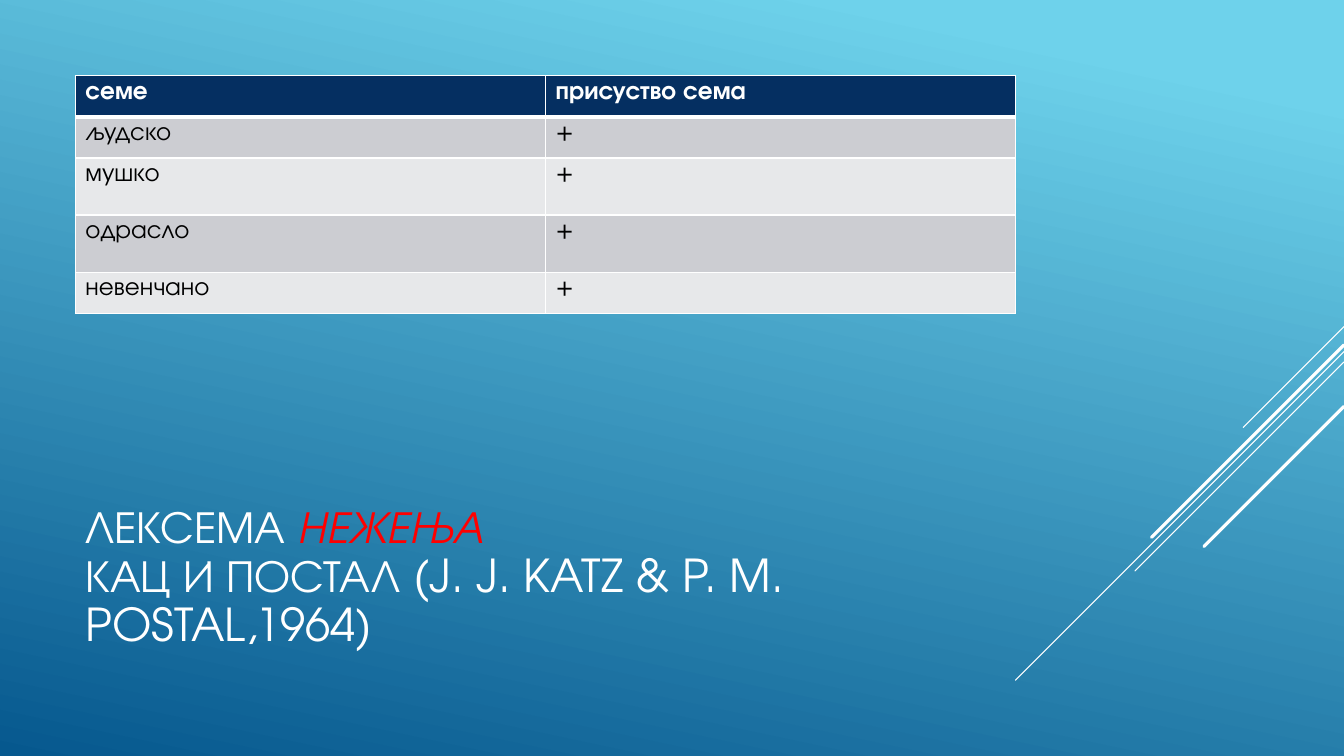
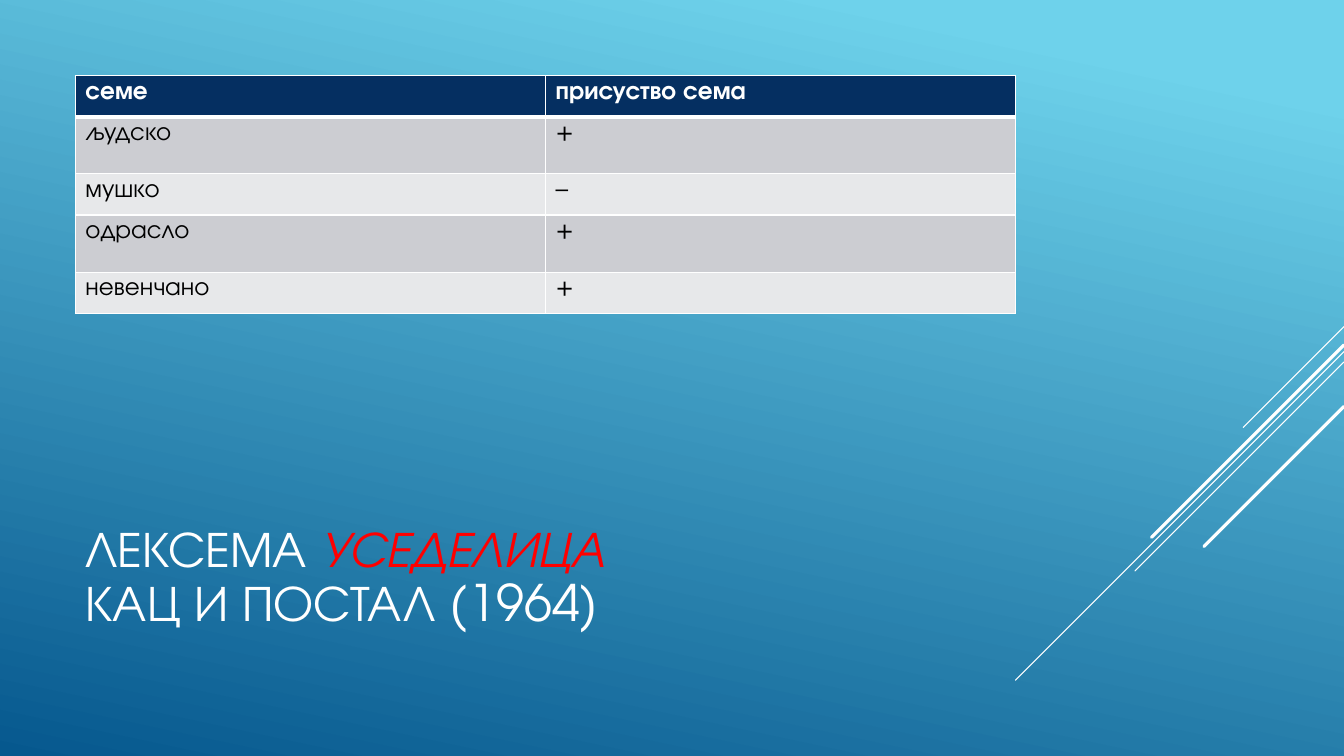
from lxml.etree import SubElement
from pptx import Presentation
from pptx.dml.color import RGBColor
from pptx.enum.shapes import MSO_CONNECTOR as Connector
from pptx.enum.text import MSO_ANCHOR as Anchor
from pptx.oxml.ns import qn
from pptx.util import Cm, Pt

WHITE = RGBColor(0xFF, 0xFF, 0xFF)
BLACK = RGBColor(0, 0, 0)
RED = RGBColor(0xFF, 0, 0)
NAVY = RGBColor(0x05, 0x2F, 0x61)
GREY = RGBColor(0xCC, 0xCD, 0xD2)
PALE_GREY = RGBColor(0xE7, 0xE8, 0xEA)
SKY = RGBColor(0x6E, 0xD2, 0xEB)
DEEP_BLUE = RGBColor(0x06, 0x58, 0x8E)

FONT = "TeX Gyre Adventor"
WIDTH, HEIGHT = 33.87, 19.05
LEFT, CONTENT_WIDTH = 1.9, 23.7
TABLE_TOP, ROW_HEIGHT, TALL_ROW_HEIGHT = 1.9, 1.04, 1.44
TITLE_TOP, TITLE_HEIGHT = 12.47, 4.19

# Diagonal rays from the right edge: start height, run in cm, weight in pt
RAYS = [(8.23, 2.54, 0.75), (8.86, 8.28, 0.75), (9.12, 5.27, 0.75),
        (8.69, 4.85, 2.25), (10.24, 3.53, 2.25)]

HEADER = ("семе", "присуство сема")
SEMES = ("људско", "мушко", "одрасло", "невенчано")


def add_text(paragraph, text, size=18, color=BLACK, bold=False, italic=False):
    run = paragraph.add_run()
    run.text = text
    font = run.font
    font.name, font.size = FONT, Pt(size)
    font.bold, font.italic = bold, italic
    font.color.rgb = color


def set_borders(cell, bottom=1):
    """Draw white borders round a cell; widths are in points."""
    properties = cell._tc.get_or_add_tcPr()
    weights = {"a:lnL": 1, "a:lnR": 1, "a:lnT": 1, "a:lnB": bottom}
    for position, (tag, weight) in enumerate(weights.items()):
        border = SubElement(properties, qn(tag), w=str(Pt(weight)))
        fill = SubElement(border, qn("a:solidFill"))
        SubElement(fill, qn("a:srgbClr"), val=str(WHITE))
        properties.insert(position, border)


class Deck:
    def __init__(self):
        self.presentation = Presentation()
        self.presentation.slide_width = Cm(WIDTH)
        self.presentation.slide_height = Cm(HEIGHT)
        self.slide = None
        self.paint_background()

    def paint_background(self):
        fill = self.presentation.slide_master.background.fill
        fill.gradient()
        fill.gradient_angle = 360 - 102
        for stop, position, color in zip(fill.gradient_stops, (0.1, 1), (SKY, DEEP_BLUE)):
            stop.position = position
            stop.color.rgb = color

    def new_slide(self):
        blank = self.presentation.slide_layouts[6]
        self.slide = self.presentation.slides.add_slide(blank)
        for top, run, weight in RAYS:
            self.ray(top, run, weight)

    def ray(self, top, run, weight):
        ray = self.slide.shapes.add_connector(
            Connector.STRAIGHT, Cm(WIDTH), Cm(top), Cm(WIDTH - run), Cm(top + run))
        ray.line.color.rgb = WHITE
        ray.line.width = Pt(weight)
        ray.line._get_or_add_ln().set("cap", "rnd")
        SubElement(ray._element.spPr, qn("a:effectLst"))

    def title(self, lexeme, authors, size):
        box = self.slide.shapes.add_textbox(
            Cm(LEFT), Cm(TITLE_TOP), Cm(CONTENT_WIDTH), Cm(TITLE_HEIGHT))
        frame = box.text_frame
        frame.word_wrap = True
        frame.vertical_anchor = Anchor.MIDDLE
        paragraph = frame.paragraphs[0]
        paragraph.line_spacing = 0.9
        add_text(paragraph, "ЛЕКСЕМА ", size=size, color=WHITE)
        add_text(paragraph, lexeme, size=size, color=RED, italic=True)
        paragraph.add_line_break()
        add_text(paragraph, authors, size=size, color=WHITE)

    def seme_table(self, signs, tall_semes):
        rows = [HEADER, *zip(SEMES, signs)]
        table = self.slide.shapes.add_table(
            len(rows), len(HEADER), Cm(LEFT), Cm(TABLE_TOP),
            Cm(CONTENT_WIDTH), Cm(ROW_HEIGHT * len(rows))).table
        for index, row in enumerate(rows):
            is_header = index == 0
            fill = NAVY if is_header else GREY if index % 2 else PALE_GREY
            table.rows[index].height = Cm(
                TALL_ROW_HEIGHT if row[0] in tall_semes else ROW_HEIGHT)
            for column, text in enumerate(row):
                cell = table.cell(index, column)
                cell.fill.solid()
                cell.fill.fore_color.rgb = fill
                set_borders(cell, bottom=3 if is_header else 1)
                add_text(cell.text_frame.paragraphs[0], text,
                         color=WHITE if is_header else BLACK, bold=is_header)

    def save(self):
        self.presentation.save("out.pptx")


def main():
    deck = Deck()

    deck.new_slide()
    deck.title("НЕЖЕЊА", "КАЦ И ПОСТАЛ (J. J. KATZ & P. M. POSTAL,1964)", size=32.4)
    deck.seme_table("++++", tall_semes=("мушко", "одрасло"))

    deck.new_slide()
    deck.title("УСЕДЕЛИЦА", "КАЦ И ПОСТАЛ (1964)", size=36)
    deck.seme_table("+–++", tall_semes=("људско", "одрасло"))

    deck.save()


if __name__ == "__main__":
    main()
